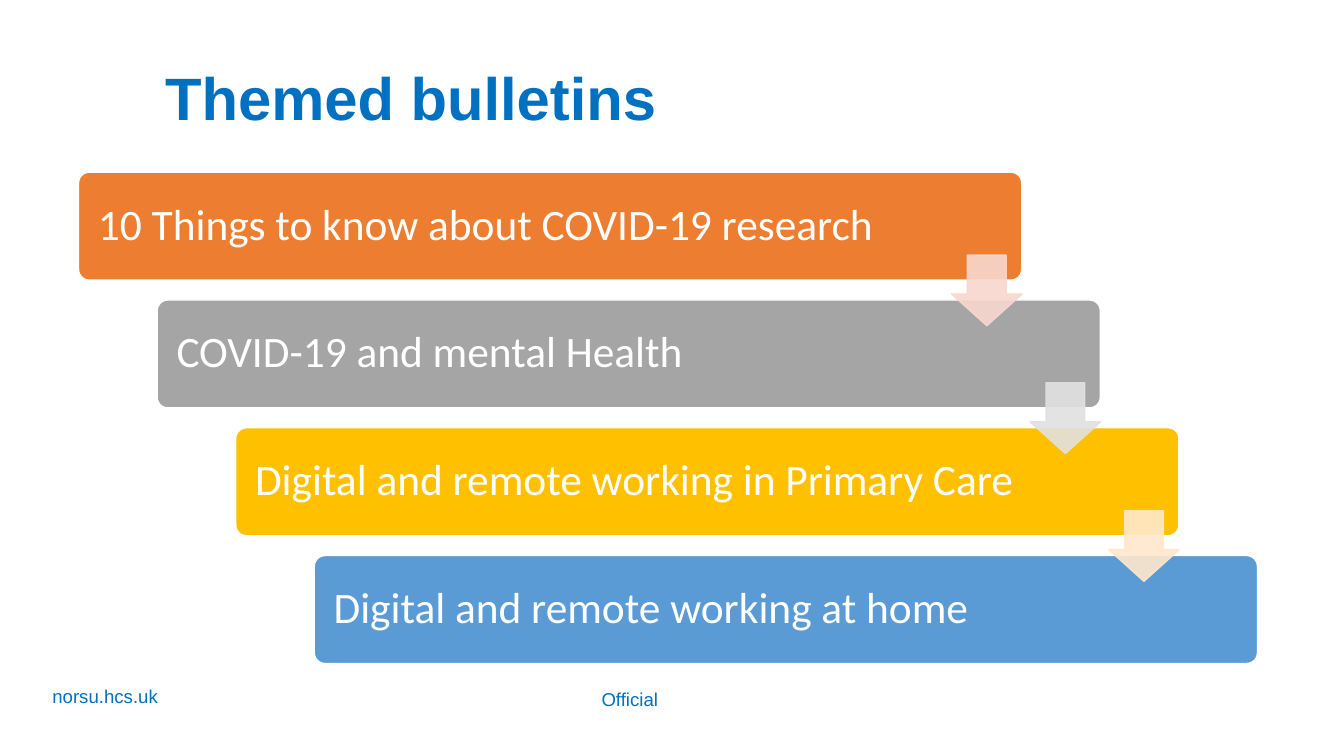
from lxml.etree import SubElement
from pptx import Presentation
from pptx.dml.color import RGBColor
from pptx.enum.shapes import MSO_SHAPE
from pptx.enum.text import MSO_ANCHOR, PP_ALIGN
from pptx.oxml.ns import qn
from pptx.util import Cm, Pt

BLUE = RGBColor(0x00, 0x70, 0xC0)
WHITE = RGBColor(0xFF, 0xFF, 0xFF)
ORANGE = RGBColor(0xED, 0x7D, 0x31)
GREY = RGBColor(0xA5, 0xA5, 0xA5)
GOLD = RGBColor(0xFF, 0xC0, 0x00)
SKY = RGBColor(0x5B, 0x9B, 0xD5)
PALE_ORANGE = RGBColor(0xF8, 0xD7, 0xCE)
PALE_GREY = RGBColor(0xE1, 0xE1, 0xE1)
PALE_GOLD = RGBColor(0xFF, 0xE8, 0xCC)

BULLETINS = [
    ("10 Things to know about COVID-19 research", ORANGE),
    ("COVID-19 and mental Health", GREY),
    ("Digital and remote working in Primary Care", GOLD),
    ("Digital and remote working at home", SKY),
]
ARROW_COLORS = [PALE_ORANGE, PALE_GREY, PALE_GOLD]

# Staircase geometry in centimetres
LEFT, TOP = 1.98, 4.34
STEP_X, STEP_Y = 1.98, 3.22
BAR_WIDTH, BAR_HEIGHT = 23.77, 2.72
ARROW_X, ARROW_Y, ARROW_SIZE = 22, 2.09, 1.78


class SlideBuilder:
    heading_font = "Arial"
    bar_font = "Calibri"

    def __init__(self, presentation):
        self.slide = presentation.slides.add_slide(presentation.slide_layouts[5])

    def set_text(self, shape, text, size, font, color, anchor, bold=False):
        frame = shape.text_frame
        frame.word_wrap = True
        frame.vertical_anchor = anchor
        paragraph = frame.paragraphs[0]
        paragraph.alignment = PP_ALIGN.LEFT
        paragraph.line_spacing = 0.9
        run = paragraph.add_run()
        run.text = text
        run.font.size = Pt(size)
        run.font.name = font
        run.font.bold = bold
        run.font.color.rgb = color

    def title(self, text, left, top, width, height):
        shape = self.slide.shapes.title
        shape.left, shape.top = Cm(left), Cm(top)
        shape.width, shape.height = Cm(width), Cm(height)
        self.set_text(shape, text, 42.7, self.heading_font, BLUE, MSO_ANCHOR.MIDDLE, bold=True)

    def label(self, text, left, top, width, height, anchor):
        shape = self.slide.shapes.add_textbox(Cm(left), Cm(top), Cm(width), Cm(height))
        self.set_text(shape, text, 13.3, self.heading_font, BLUE, anchor)

    def block(self, kind, left, top, width, height, adjustments, fill, line):
        shape = self.slide.shapes.add_shape(kind, Cm(left), Cm(top), Cm(width), Cm(height))
        for index, value in enumerate(adjustments):
            shape.adjustments[index] = value
        shape.shadow.inherit = False
        shape.fill.solid()
        shape.fill.fore_color.rgb = fill
        shape.line.color.rgb = line
        shape.line.width = Pt(1)
        return shape

    def bar(self, text, left, top, color):
        shape = self.block(MSO_SHAPE.ROUNDED_RECTANGLE, left, top,
                           BAR_WIDTH, BAR_HEIGHT, [0.1], color, WHITE)
        shape.text_frame.margin_left = shape.text_frame.margin_right = Cm(0.41)
        self.set_text(shape, text, 31, self.bar_font, WHITE, MSO_ANCHOR.MIDDLE)

    def arrow(self, left, top, color):
        shape = self.block(MSO_SHAPE.DOWN_ARROW, left, top,
                           ARROW_SIZE, ARROW_SIZE, [0.55, 0.45], color, color)
        # Fill and line are 90 % opaque
        for color_element in shape._element.spPr.iter(qn("a:srgbClr")):
            SubElement(color_element, qn("a:alpha"), val="90000")


def main():
    presentation = Presentation()
    presentation.slide_width, presentation.slide_height = Cm(33.87), Cm(19.05)
    builder = SlideBuilder(presentation)

    # Title and footer
    builder.title("Themed bulletins", 3.91, 1.57, 28.45, 1.98)
    builder.label("norsu.hcs.uk", 1.07, 17.2, 8.1, 0.97, MSO_ANCHOR.TOP)
    builder.label("Official", 14.91, 15.39, 16.76, 2.64, MSO_ANCHOR.BOTTOM)

    # Staircase of bulletins
    for step, (text, color) in enumerate(BULLETINS):
        builder.bar(text, LEFT + step * STEP_X, TOP + step * STEP_Y, color)

    # Arrows from each bulletin to the next
    for step, color in enumerate(ARROW_COLORS):
        builder.arrow(LEFT + ARROW_X + step * STEP_X, TOP + ARROW_Y + step * STEP_Y, color)

    presentation.save("out.pptx")


if __name__ == "__main__":
    main()
